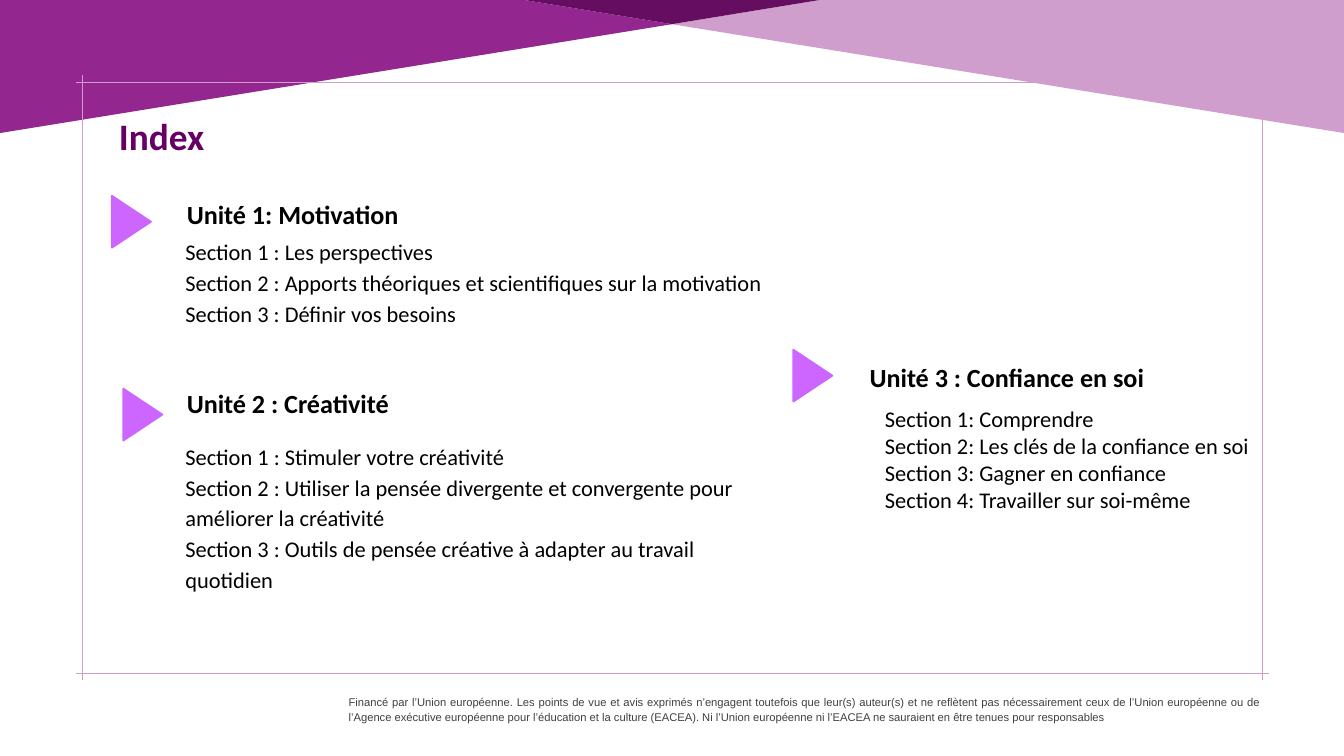
from dataclasses import dataclass

from lxml import etree
from pptx import Presentation
from pptx.dml.color import RGBColor
from pptx.enum.shapes import MSO_CONNECTOR, MSO_SHAPE
from pptx.enum.text import PP_ALIGN
from pptx.oxml.ns import qn
from pptx.util import Inches, Pt

TRIANGLE = MSO_SHAPE.ISOSCELES_TRIANGLE
STRAIGHT = MSO_CONNECTOR.STRAIGHT
LEFT, JUSTIFY = PP_ALIGN.LEFT, PP_ALIGN.JUSTIFY


@dataclass(frozen=True)
class Theme:
    purple: str = "93268F"
    light: str = "CF9ECC"
    dark: str = "640D61"
    title: str = "660066"
    marker: str = "CC66FF"
    text: str = "000000"
    footer: str = "404040"
    body_font: str = "Calibri"
    footer_font: str = "Arial"
    title_size: int = 40
    heading_size: int = 28
    body_size: int = 24
    footer_size: int = 12


THEME = Theme()

FRAME_LEFT, FRAME_TOP, FRAME_RIGHT, FRAME_BOTTOM = 1.23, 1.22, 18.78, 10.02
OVERHANG = 0.1

FOOTER = (
    "Financé par l’Union européenne. Les points de vue et avis exprimés n’engagent "
    "toutefois que leur(s) auteur(s) et ne reflètent pas nécessairement ceux de "
    "l’Union européenne ou de l’Agence exécutive européenne pour l’éducation et la "
    "culture (EACEA). Ni l’Union européenne ni l’EACEA ne sauraient en être tenues "
    "pour responsables"
)

UNITS = [
    {
        "heading": "Unité 1: Motivation",
        "heading_box": (2.66, 2.84, 9.56, 0.57),
        "heading_spacing": 1.15,
        "sections": [
            "Section 1 : Les perspectives",
            "Section 2 : Apports théoriques et scientifiques sur la motivation",
            "Section 3 : Définir vos besoins",
        ],
        "sections_box": (2.66, 3.44, 9.56, 2.36),
        "sections_format": {"spacing": 1.15},
        "marker": (1.57, 3.01),
    },
    {
        "heading": "Unité 2 : Créativité",
        "heading_box": (2.66, 5.72, 8.27, 0.57),
        "heading_spacing": 1.0,
        "sections": [
            "Section 1 : Stimuler votre créativité",
            "Section 2 : Utiliser la pensée divergente et convergente pour "
            "améliorer la créativité",
            "Section 3 : Outils de pensée créative à adapter au travail quotidien",
        ],
        "sections_box": (2.66, 6.48, 8.65, 3.29),
        "sections_format": {"spacing": 1.15},
        "marker": (1.74, 5.88),
    },
    {
        "heading": "Unité 3 : Confiance en soi",
        "heading_box": (12.82, 5.33, 6.02, 0.57),
        "heading_spacing": 1.0,
        "sections": [
            "Section 1: Comprendre",
            "Section 2: Les clés de la confiance en soi",
            "Section 3: Gagner en confiance",
            "Section 4: Travailler sur soi-même",
        ],
        "sections_box": (12.82, 5.98, 6.02, 1.72),
        "sections_format": {"indent": 0.25},
        "marker": (11.71, 5.3),
    },
]


def color(value):
    return RGBColor.from_string(value)


def add_text(shapes, lines, box, *, size=THEME.body_size, font=THEME.body_font,
             fill=THEME.text, bold=False, align=LEFT, spacing=1.0, indent=0,
             side_inset=0.1):
    """Add a text box with one paragraph for each line."""
    shape = shapes.add_textbox(*map(Inches, box))
    frame = shape.text_frame
    frame.word_wrap = True
    frame.margin_left = frame.margin_right = Inches(side_inset)
    frame.text = "\n".join(lines)
    for paragraph in frame.paragraphs:
        paragraph.alignment = align
        paragraph.line_spacing = spacing
        if indent:
            paragraph._p.get_or_add_pPr().set("marL", str(Inches(indent)))
        for run in paragraph.runs:
            run.font.name = font
            run.font.size = Pt(size)
            run.font.bold = bold
            run.font.color.rgb = color(fill)


def add_polygon(shapes, points, fill):
    start, *others = [(Inches(x), Inches(y)) for x, y in points]
    builder = shapes.build_freeform(*start)
    builder.add_line_segments(others, close=True)
    shape = builder.convert_to_shape()
    shape.shadow.inherit = False
    shape.fill.solid()
    shape.fill.fore_color.rgb = color(fill)
    shape.line.fill.background()


def add_line(shapes, start, end):
    line = shapes.add_connector(STRAIGHT, *map(Inches, (*start, *end)))
    line.line.color.rgb = color(THEME.light)
    line.line.width = Pt(0.5)
    etree.SubElement(line._element.spPr, qn("a:effectLst"))


def add_frame(shapes):
    """Add four thin lines that cross a little beyond each corner."""
    for y in (FRAME_TOP, FRAME_BOTTOM):
        add_line(shapes, (FRAME_LEFT - OVERHANG, y), (FRAME_RIGHT + OVERHANG, y))
    for x in (FRAME_LEFT, FRAME_RIGHT):
        add_line(shapes, (x, FRAME_TOP - OVERHANG), (x, FRAME_BOTTOM + OVERHANG))


def add_marker(shapes, left, top):
    """Add a triangle that points right."""
    shape = shapes.add_shape(TRIANGLE, *map(Inches, (left, top, 0.77, 0.58)))
    shape.rotation = 90
    shape.shadow.inherit = False
    shape.fill.solid()
    shape.fill.fore_color.rgb = color(THEME.marker)
    shape.line.color.rgb = color(THEME.marker)
    shape.line.width = Pt(2)


def add_unit(shapes, unit):
    group = shapes.add_group_shape().shapes
    add_text(group, unit["sections"], unit["sections_box"], **unit["sections_format"])
    add_text(group, [unit["heading"]], unit["heading_box"], size=THEME.heading_size,
             bold=True, spacing=unit["heading_spacing"], side_inset=0.12)


def main():
    presentation = Presentation()
    presentation.slide_width = Inches(20)
    presentation.slide_height = Inches(11.25)
    slide = presentation.slides.add_slide(presentation.slide_layouts[6])
    shapes = slide.shapes

    add_polygon(shapes, [(0, 1.98), (0, 0), (7.8, 0), (10, 0.36)], THEME.purple)
    add_frame(shapes)
    add_polygon(shapes, [(20, 1.98), (10, 0.36), (12.2, 0), (20, 0)], THEME.light)
    add_polygon(shapes, [(10, 0.36), (7.8, 0), (12.2, 0)], THEME.dark)

    add_text(shapes, [FOOTER], (5.08, 10.29, 13.79, 0.52), size=THEME.footer_size,
             font=THEME.footer_font, fill=THEME.footer, align=JUSTIFY, spacing=1.07,
             indent=0.01)
    add_text(shapes, ["Index"], (1.67, 1.64, 10.35, 0.77), size=THEME.title_size,
             fill=THEME.title, bold=True)
    for unit in UNITS:
        add_unit(shapes, unit)
    for unit in UNITS:
        add_marker(shapes, *unit["marker"])

    presentation.save("out.pptx")


if __name__ == "__main__":
    main()
